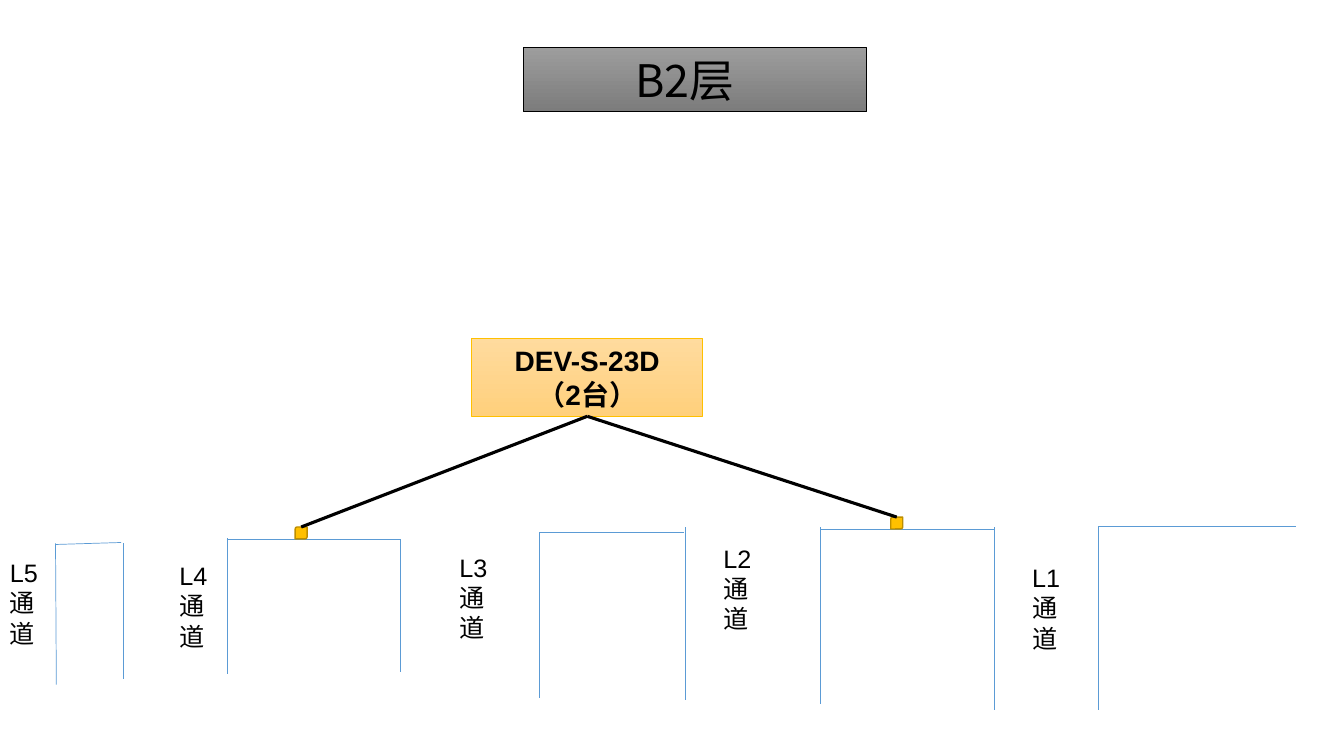
from lxml import etree
from pptx import Presentation
from pptx.dml.color import RGBColor
from pptx.enum.shapes import MSO_CONNECTOR, MSO_SHAPE
from pptx.enum.text import MSO_ANCHOR, PP_ALIGN
from pptx.oxml.ns import qn
from pptx.util import Cm, Pt

BLACK = RGBColor(0x00, 0x00, 0x00)
PASSAGE_BLUE = RGBColor(0x5B, 0x9B, 0xD5)
AMBER = RGBColor(0xFF, 0xC0, 0x00)
DARK_AMBER = RGBColor(0xBD, 0x8E, 0x00)
GREYS = RGBColor(0x9D, 0x9D, 0x9D), RGBColor(0x7C, 0x7C, 0x7C)
ORANGES = RGBColor(0xFF, 0xDB, 0x9E), RGBColor(0xFF, 0xD0, 0x7C)
LATIN_FONT = "Arial"
CHINESE_FONT = "Noto Sans CJK SC"

# Label text, label box (left, top, width), outline strokes (x1, y1, x2, y2), in cm
PASSAGES = [
    ("L1通道", (25.76, 14.05, 1.4),
     [(27.69, 13.26, 32.66, 13.26), (27.69, 13.26, 27.69, 17.88)]),
    ("L2\n通\n道", (17.98, 13.56, 1.93),
     [(20.68, 13.34, 25.07, 13.34), (20.68, 13.28, 20.68, 17.73),
      (25.07, 13.28, 25.07, 17.88)]),
    ("L3通道", (11.33, 13.79, 1.57),
     [(13.59, 13.41, 17.25, 13.41), (13.59, 13.41, 13.59, 17.58),
      (17.27, 13.28, 17.27, 17.65)]),
    ("L4通道", (4.27, 14.0, 1.35),
     [(5.72, 13.59, 10.08, 13.59), (5.72, 13.56, 5.72, 16.99),
      (10.08, 13.59, 10.08, 16.94)]),
    ("L5通道", (0, 13.92, 1.35),
     [(1.4, 13.72, 3.05, 13.67), (1.4, 13.69, 1.42, 17.25),
      (3.1, 13.69, 3.1, 17.12)]),
]
DEVICE_SIZE = 0.3
DEVICES = [(7.44, 13.28), (22.45, 13.03)]


def write_text(text_frame, text, size, font=LATIN_FONT, bold=False, align=None):
    text_frame.word_wrap = True
    text_frame.text = text
    for paragraph in text_frame.paragraphs:
        paragraph.alignment = align
        paragraph.font.name = font
        paragraph.font.size = Pt(size)
        paragraph.font.bold = bold
        paragraph.font.color.rgb = BLACK
        for run in paragraph.runs:
            east_asian = etree.SubElement(run.font._element, qn("a:ea"))
            east_asian.set("typeface", CHINESE_FONT)


def add_line(slide, x1, y1, x2, y2, color, weight):
    line = slide.shapes.add_connector(
        MSO_CONNECTOR.STRAIGHT, Cm(x1), Cm(y1), Cm(x2), Cm(y2))
    line.line.color.rgb = color
    line.line.width = Pt(weight)
    etree.SubElement(line._element.spPr, qn("a:effectLst"))
    return line


def add_gradient_box(slide, left, top, width, height, colors, outline):
    box = slide.shapes.add_shape(
        MSO_SHAPE.RECTANGLE, Cm(left), Cm(top), Cm(width), Cm(height))
    box.shadow.inherit = False
    box.fill.gradient()
    box.fill.gradient_angle = 270
    for stop, color, position in zip(box.fill.gradient_stops, colors, (0, 1)):
        stop.color.rgb = color
        stop.position = position
    box.line.color.rgb = outline
    box.line.width = Pt(0.5)
    return box


def add_title(slide, left, top, width, height):
    title = add_gradient_box(slide, left, top, width, height, GREYS, BLACK)
    title.text_frame.margin_right = Cm(0.76)
    title.text_frame.vertical_anchor = MSO_ANCHOR.MIDDLE
    write_text(title.text_frame, "B2层", 32, CHINESE_FONT, align=PP_ALIGN.CENTER)


def add_passage(slide, label, left, top, width, strokes):
    for stroke in strokes:
        add_line(slide, *stroke, PASSAGE_BLUE, 0.5)
    text_box = slide.shapes.add_textbox(Cm(left), Cm(top), Cm(width), Cm(2.54))
    write_text(text_box.text_frame, label, 18)


def add_device_group(slide, left, top, width, height):
    # Model box
    model = add_gradient_box(slide, left, top, width, height, ORANGES, AMBER)
    model.text_frame.vertical_anchor = MSO_ANCHOR.TOP
    write_text(model.text_frame, "DEV-S-23D\n（2台）", 20, bold=True,
               align=PP_ALIGN.CENTER)

    # Installed devices, each tied to the model box
    for x, y in DEVICES:
        device = slide.shapes.add_shape(
            MSO_SHAPE.ROUND_2_DIAG_RECTANGLE,
            Cm(x), Cm(y), Cm(DEVICE_SIZE), Cm(DEVICE_SIZE))
        device.shadow.inherit = False
        device.fill.solid()
        device.fill.fore_color.rgb = AMBER
        device.line.color.rgb = DARK_AMBER
        device.line.width = Pt(1)
        link = add_line(slide, x + DEVICE_SIZE / 2, y,
                        left + width / 2, top + height, BLACK, 2.25)
        link.end_connect(model, 2)


def main():
    presentation = Presentation()
    presentation.slide_width = Cm(33.87)
    presentation.slide_height = Cm(19.05)
    slide = presentation.slides.add_slide(presentation.slide_layouts[6])

    add_title(slide, 13.18, 1.19, 8.66, 1.63)
    for label, label_box, strokes in PASSAGES:
        add_passage(slide, label, *label_box, strokes)
    add_device_group(slide, 11.89, 8.53, 5.82, 1.96)

    presentation.save("out.pptx")


if __name__ == "__main__":
    main()
